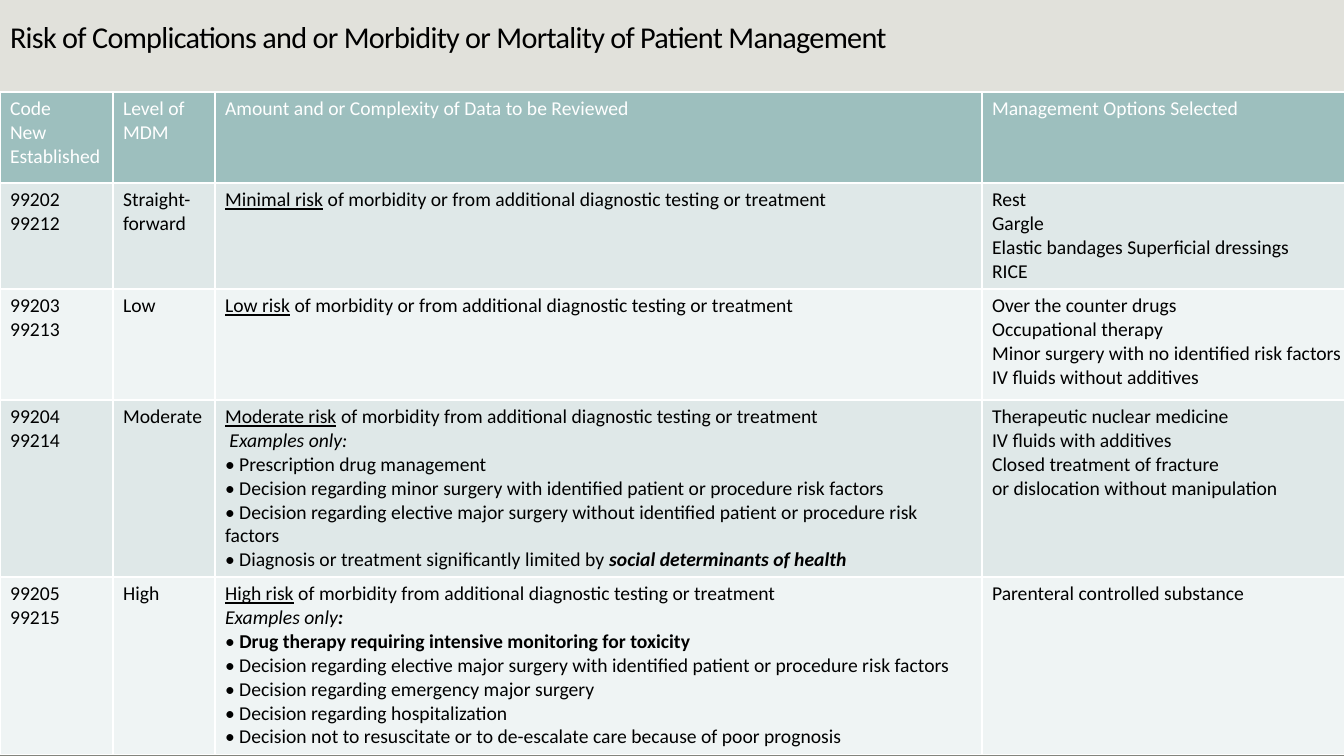
from lxml.etree import SubElement
from pptx import Presentation
from pptx.dml.color import RGBColor
from pptx.enum.shapes import MSO_SHAPE
from pptx.enum.text import MSO_ANCHOR, MSO_AUTO_SIZE, PP_ALIGN
from pptx.oxml.ns import qn
from pptx.util import Pt

SCALE = 914400 / 100.8
FONT = "Calibri"
TITLE = "Risk of Complications and or Morbidity or Mortality of Patient Management"
COLUMN_WIDTHS = [113, 102, 767, 374]
ROW_HEIGHTS = [91, 106, 111, 176, 177]
HEADER_FILL, BAND_FILLS = "9DBFBE", ["EFF4F4", "DFE8E8"]

ROWS = [
    [
        ["Code", "New", "Established"],
        ["Level of MDM"],
        ["Amount and or Complexity of Data to be Reviewed"],
        ["Management Options Selected"],
    ],
    [
        ["99202", "99212"],
        ["Straight-forward"],
        [[("Minimal risk", "u"), (" of morbidity or from additional diagnostic testing or treatment", "")]],
        ["Rest", "Gargle", "Elastic bandages Superficial dressings", "RICE"],
    ],
    [
        ["99203", "99213"],
        ["Low"],
        [[("Low risk", "u"), (" of morbidity or from additional diagnostic testing or treatment", "")]],
        [
            "Over the counter drugs",
            "Occupational therapy",
            "Minor surgery with no identified risk factors",
            "IV fluids without additives",
        ],
    ],
    [
        ["99204", "99214"],
        ["Moderate"],
        [
            [("Moderate risk", "u"), (" of morbidity from additional diagnostic testing or treatment", "")],
            [(" Examples only:", "i")],
            "• Prescription drug management",
            "• Decision regarding minor surgery with identified patient or procedure risk factors",
            "• Decision regarding elective major surgery without identified patient or procedure risk factors",
            [("• Diagnosis or treatment significantly limited by ", ""), ("social determinants of health", "bi")],
        ],
        [
            "Therapeutic nuclear medicine",
            "IV fluids with additives",
            "Closed treatment of fracture",
            "or dislocation without manipulation",
        ],
    ],
    [
        ["99205", "99215"],
        ["High"],
        [
            [("High risk", "u"), (" of morbidity from additional diagnostic testing or treatment", "")],
            [("Examples only", "i"), (":", "bi")],
            [("• ", ""), ("Drug therapy requiring intensive monitoring for toxicity", "b")],
            "• Decision regarding elective major surgery with identified patient or procedure risk factors",
            "• Decision regarding emergency major surgery",
            "• Decision regarding hospitalization",
            "• Decision not to resuscitate or to de-escalate care because of poor prognosis",
        ],
        ["Parenteral controlled substance"],
    ],
]


def px(length):
    """Turn pixels into EMU."""
    return round(length * SCALE)


def paint(fill, color):
    """Give a fill one solid colour."""
    fill.solid()
    fill.fore_color.rgb = RGBColor.from_string(color)


def add_span(para, text, size, color, style=""):
    """Add one run, with style letters b, i and u, and return it."""
    span = para.add_run()
    span.text = text
    font = span.font
    font.name, font.size = FONT, Pt(size)
    font.bold, font.italic, font.underline = ("b" in style, "i" in style, "u" in style)
    font.color.rgb = RGBColor.from_string(color)
    return span


def add_title(page, left, top, width, height):
    """Place and format the title placeholder."""
    title = page.shapes.title
    title.left, title.top, title.width, title.height = map(px, (left, top, width, height))
    frame = title.text_frame
    frame.word_wrap = True
    frame.auto_size = MSO_AUTO_SIZE.NONE
    frame.vertical_anchor = MSO_ANCHOR.BOTTOM
    para = frame.paragraphs[0]
    para.alignment = PP_ALIGN.LEFT
    para.line_spacing = 0.85
    span = add_span(para, TITLE, 21.6, "000000")
    span.font._element.set("spc", "-50")


def add_footer_bar(page, left, top, width, height):
    """Draw the plain bar along the bottom edge."""
    bar = page.shapes.add_shape(MSO_SHAPE.RECTANGLE, *map(px, (left, top, width, height)))
    bar.shadow.inherit = False
    paint(bar.fill, "82847C")
    bar.line.fill.background()


def add_borders(cell, color, width):
    """Outline a cell on its four sides."""
    properties = cell._tc.get_or_add_tcPr()
    for side in ("lnL", "lnR", "lnT", "lnB"):
        line = SubElement(properties, qn(f"a:{side}"), w=str(Pt(width)))
        fill = SubElement(line, qn("a:solidFill"))
        SubElement(fill, qn("a:srgbClr"), val=color)


def fill_cell(cell, paragraphs, text_color, fill_color):
    """Write and format one table cell."""
    add_borders(cell, "FFFFFF", 1)
    paint(cell.fill, fill_color)
    frame = cell.text_frame
    for index, content in enumerate(paragraphs):
        para = frame.add_paragraph() if index else frame.paragraphs[0]
        spans = [(content, "")] if isinstance(content, str) else content
        for text, style in spans:
            add_span(para, text, 14, text_color, style)


def add_risk_table(page, left, top):
    """Build the table of risk levels."""
    box = (left, top, sum(COLUMN_WIDTHS), sum(ROW_HEIGHTS))
    table = page.shapes.add_table(len(ROWS), len(COLUMN_WIDTHS), *map(px, box)).table
    table.horz_banding = False
    for column, width in zip(table.columns, COLUMN_WIDTHS):
        column.width = px(width)
    for index, (row, height, contents) in enumerate(zip(table.rows, ROW_HEIGHTS, ROWS)):
        row.height = px(height)
        text_color = "000000" if index else "FFFFFF"
        fill_color = BAND_FILLS[index % 2] if index else HEADER_FILL
        for cell, paragraphs in zip(row.cells, contents):
            fill_cell(cell, paragraphs, text_color, fill_color)


def main():
    """Build and save the deck."""
    deck = Presentation()
    deck.slide_width, deck.slide_height = px(1344), px(756)
    page = deck.slides.add_slide(deck.slide_layouts[5])
    paint(page.background.fill, "E1E1DB")
    add_footer_bar(page, 0, 706, 1344, 50)
    add_title(page, 0, 21, 1434, 39)
    add_risk_table(page, 0, 92)
    deck.save("out.pptx")


if __name__ == "__main__":
    main()
